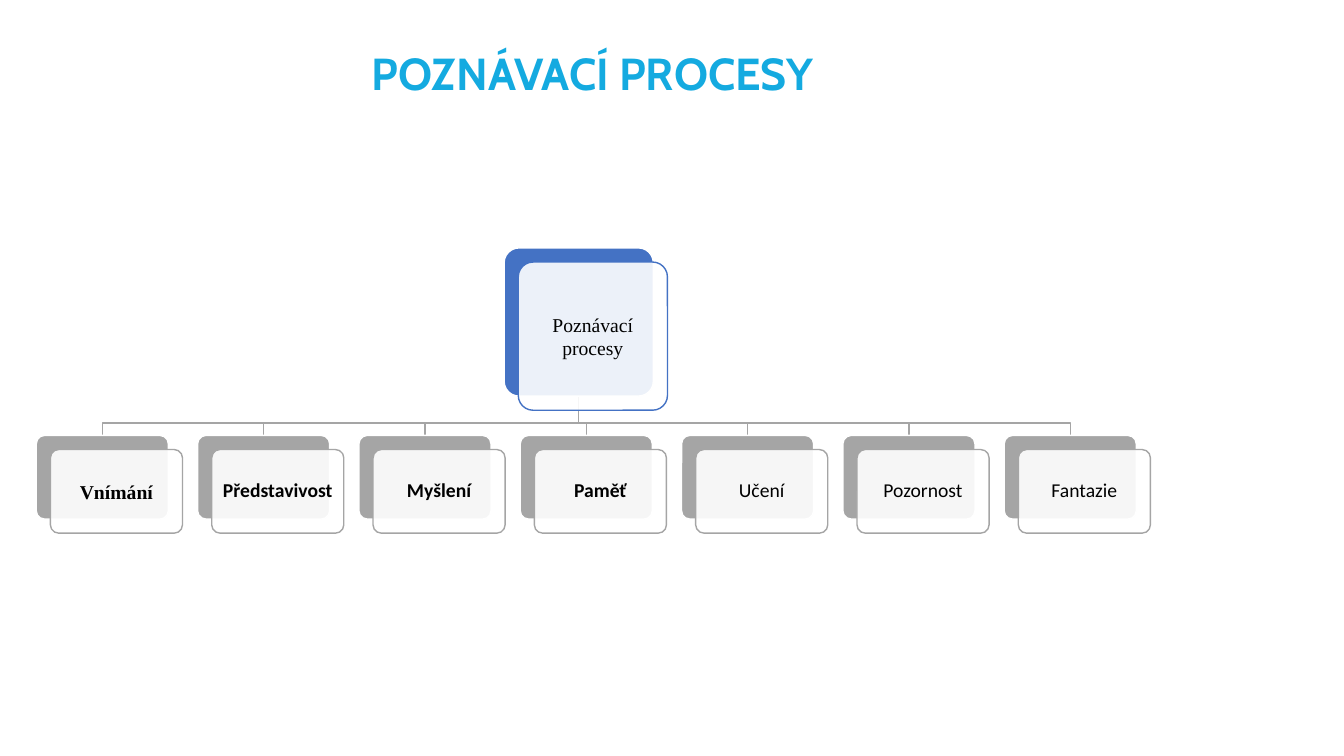
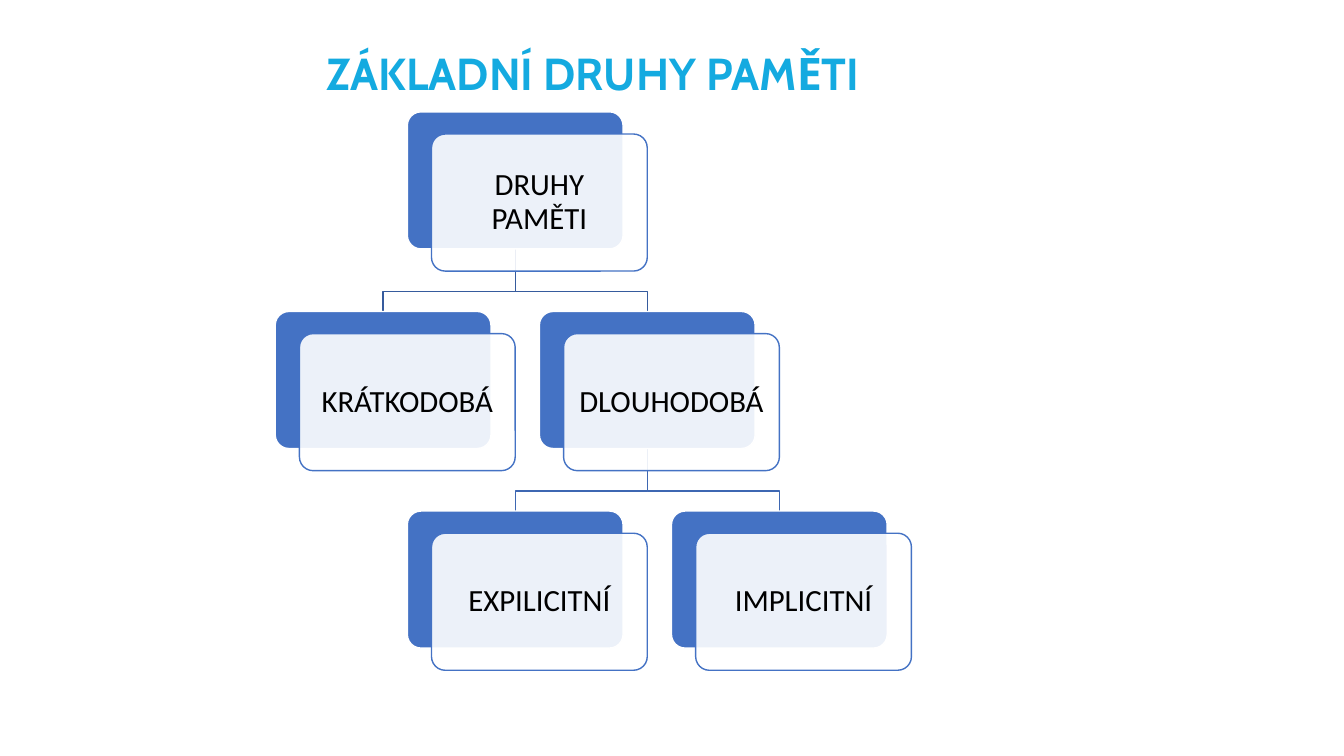
from dataclasses import dataclass

from lxml import etree
from pptx import Presentation
from pptx import util as u
from pptx.dml.color import RGBColor
from pptx.enum import shapes, text
from pptx.oxml.ns import qn

COLORS = {
    "title": "14AAE0", "blue": "4472C4", "grey": "A5A5A5",
    "upper_link": "365B9D", "lower_link": "3E67B2",
    "white": "FFFFFF", "black": "000000",
}
SERIF, SANS = "Times New Roman", "Calibri"
LINK_BEND = 0.68  # share of the drop at which a link turns


@dataclass
class Grid:
    """Places card corners by column and row, in inches."""
    left: float
    top: float
    column: float
    row: float

    def at(self, column, row):
        return self.left + column * self.column, self.top + row * self.row


@dataclass
class CardStyle:
    """Shared size and look of a card and the panel lying over it."""
    width: float
    height: float
    shift: tuple
    color: str
    size: int
    inset: float


@dataclass
class Card:
    label: str
    corner: tuple
    style: CardStyle
    font: str = SANS
    bold: bool = False

    @property
    def middle(self):
        return self.corner[0] + self.style.width / 2

    @property
    def bottom(self):
        return self.corner[1] + self.style.height


def rgb(name):
    return RGBColor.from_string(COLORS[name])


def add_run(paragraph, wording, font, size, color, bold=False):
    run = paragraph.add_run()
    run.text = wording
    run.font.name, run.font.size, run.font.bold = font, u.Pt(size), bold
    run.font.color.rgb = rgb(color)


# Slide with the common title
def add_titled_slide(deck, wording):
    slide = deck.slides.add_slide(deck.slide_layouts[5])
    title = slide.shapes.title
    title.left, title.top = u.Inches(0.35), u.Inches(0.4)
    title.width, title.height = u.Inches(11.06), u.Inches(0.71)
    frame = title.text_frame
    frame.auto_size = text.MSO_AUTO_SIZE.NONE
    frame.vertical_anchor = text.MSO_ANCHOR.MIDDLE
    paragraph = frame.paragraphs[0]
    paragraph.alignment = text.PP_ALIGN.CENTER
    paragraph.line_spacing = 0.9
    add_run(paragraph, wording, "Cabin", 32, "title", bold=True)
    return slide


# Angled link from the bottom of a card to the top of its child
def add_link(slide, parent, child, color):
    top = child.corner[1]
    bend = parent.bottom + LINK_BEND * (top - parent.bottom)
    points = [(parent.middle, parent.bottom), (parent.middle, bend),
              (child.middle, bend), (child.middle, top)]
    start, *rest = [(u.Inches(x), u.Inches(y)) for x, y in points]
    builder = slide.shapes.build_freeform(*start)
    builder.add_line_segments(rest, close=False)
    link = builder.convert_to_shape()
    link.shadow.inherit = False
    link.fill.background()
    link.line.color.rgb = rgb(color)
    link.line.width = u.Pt(1)


def add_panel(slide, corner, style, fill, line):
    panel = slide.shapes.add_shape(
        shapes.MSO_SHAPE.ROUNDED_RECTANGLE,
        *(u.Inches(n) for n in (*corner, style.width, style.height)))
    panel.adjustments[0] = 0.1
    panel.shadow.inherit = False
    panel.fill.solid()
    panel.fill.fore_color.rgb = rgb(fill)
    panel.line.color.rgb = rgb(line)
    panel.line.width = u.Pt(1)
    return panel


# Coloured card under a nearly opaque panel with the label
def add_card(slide, card):
    style = card.style
    add_panel(slide, card.corner, style, style.color, "white")
    front_corner = [c + s for c, s in zip(card.corner, style.shift)]
    front = add_panel(slide, front_corner, style, "white", style.color)
    fill_color = front.fill._xPr.find(qn("a:solidFill"))[0]
    etree.SubElement(fill_color, qn("a:alpha"), val="90000")

    frame = front.text_frame
    frame.word_wrap = True
    frame.vertical_anchor = text.MSO_ANCHOR.MIDDLE
    frame.margin_left = frame.margin_right = u.Inches(style.inset)
    frame.margin_top = frame.margin_bottom = u.Inches(style.inset)
    paragraph = frame.paragraphs[0]
    paragraph.alignment = text.PP_ALIGN.CENTER
    paragraph.line_spacing = 1.0 if card.font == SERIF else 0.9
    add_run(paragraph, card.label, card.font, style.size, "black", card.bold)


# Links lie behind all cards
def add_tree(slide, cards, links):
    for parent, child, color in links:
        add_link(slide, parent, child, color)
    for card in cards:
        add_card(slide, card)


def add_processes(deck):
    slide = add_titled_slide(deck, "POZNÁVACÍ PROCESY")
    grid = Grid(left=0.36, top=2.46, column=1.6, row=1.86)
    root_style = CardStyle(1.48, 1.47, (0.14, 0.14), "blue", 14, 0.06)
    process_style = CardStyle(1.31, 0.83, (0.14, 0.14), "grey", 14, 0.06)
    processes = [
        ("Vnímání", SERIF, True), ("Představivost", SANS, True),
        ("Myšlení", SANS, True), ("Paměť", SANS, True),
        ("Učení", SANS, False), ("Pozornost", SANS, False),
        ("Fantazie", SANS, False),
    ]
    root = Card("Poznávací procesy", grid.at(2.9, 0), root_style, SERIF)
    children = [Card(label, grid.at(column, 1), process_style, font, bold)
                for column, (label, font, bold) in enumerate(processes)]
    add_tree(slide, [root, *children],
             [(root, child, "grey") for child in children])


def add_memory_types(deck):
    slide = add_titled_slide(deck, "ZÁKLADNÍ DRUHY PAMĚTI")
    grid = Grid(left=2.73, top=1.11, column=1.31, row=1.98)
    style = CardStyle(2.14, 1.36, (0.24, 0.22), "blue", 22, 0.09)
    places = [("DRUHY PAMĚTI", 1, 0), ("KRÁTKODOBÁ", 0, 1),
              ("DLOUHODOBÁ", 2, 1), ("EXPILICITNÍ", 1, 2),
              ("IMPLICITNÍ", 3, 2)]
    cards = [Card(label, grid.at(column, row), style)
             for label, column, row in places]
    memory, short_term, long_term, explicit, implicit = cards
    add_tree(slide, cards, [
        (long_term, implicit, "lower_link"),
        (long_term, explicit, "lower_link"),
        (memory, long_term, "upper_link"),
        (memory, short_term, "upper_link"),
    ])


def main():
    deck = Presentation()
    deck.slide_width, deck.slide_height = u.Inches(13.33), u.Inches(7.5)
    add_processes(deck)
    add_memory_types(deck)
    deck.save("out.pptx")


if __name__ == "__main__":
    main()
